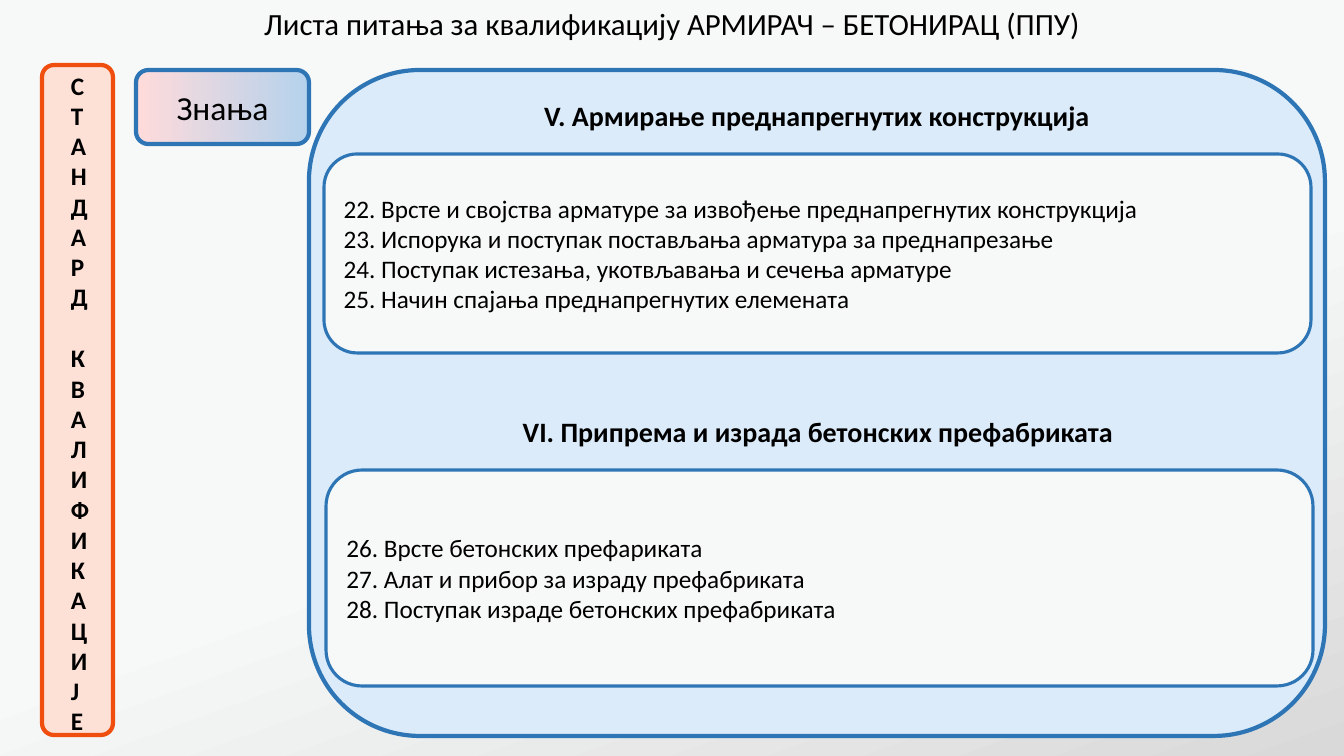
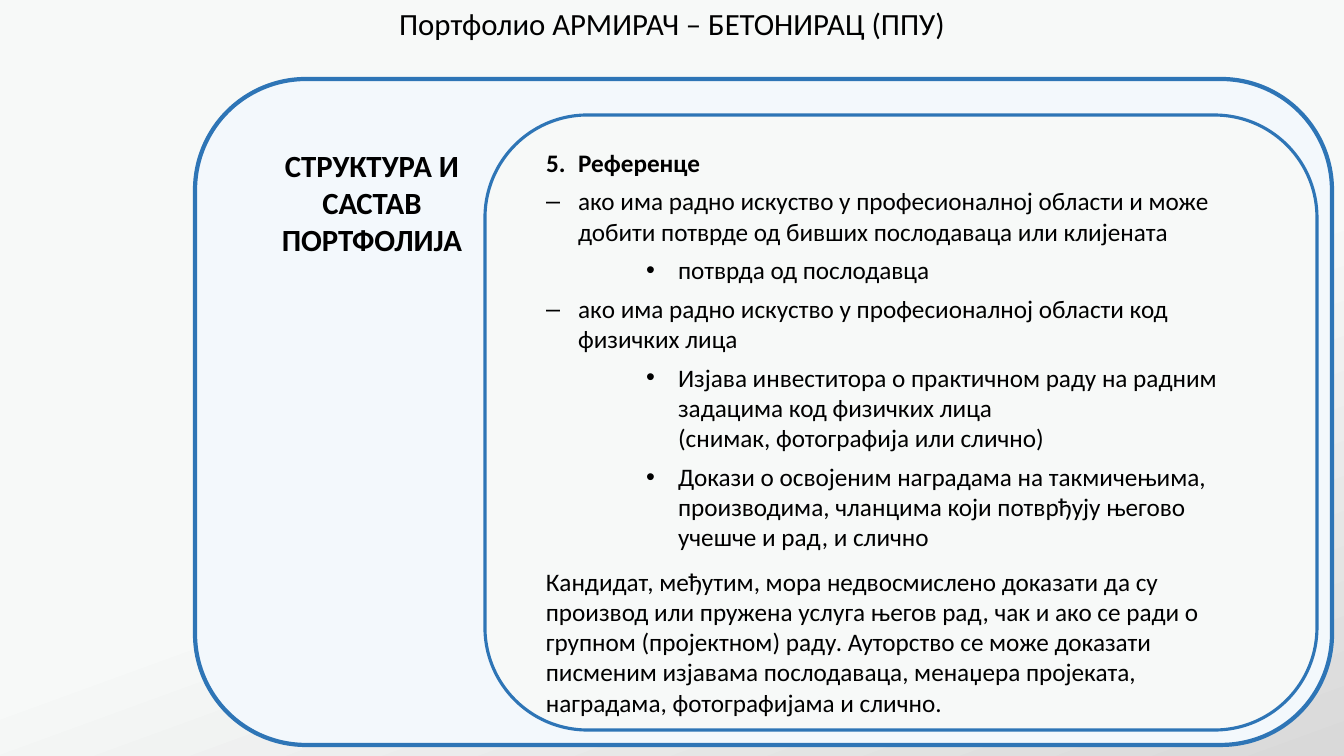
"""Build two slides on the rebar and concrete worker qualification."""
from lxml import etree
from pptx import Presentation
from pptx.dml.color import RGBColor
from pptx.enum.shapes import MSO_SHAPE
from pptx.enum.text import MSO_ANCHOR as ANCHOR, MSO_AUTO_SIZE as AUTO, PP_ALIGN as ALIGN
from pptx.oxml.ns import qn
from pptx.util import Emu, Pt

COLORS = {
    "text": "000000",
    "page": "F7F9F8",
    "page_edge": "D9D9D9",
    "blue": "2E75B6",
    "pale_blue": "DBEBFA",
    "faint_blue": "F3F8FC",
    "orange": "EF4E0F",
    "peach": "FDE1D7",
    "tag_left": "FFDBDB",
    "tag_right": "B5D2EC",
}
FONT = "Calibri"
PX = 12192000 / 1344
WIDTH, HEIGHT = 1344, 756

QUESTIONS_TITLE = "Листа питања за квалификацију АРМИРАЧ – БЕТОНИРАЦ (ППУ)"
STANDARD = ["СТАНДАРД", "КВАЛИФИКАЦИЈЕ"]
TAG = "Знања"
SECTIONS = [
    {
        "heading": "V. Армирање преднапрегнутих конструкција",
        "heading_box": (309, 94, 1016, 44),
        "list_box": (324, 154, 987, 199),
        "questions": [
            "22. Врсте и својства арматуре за извођење преднапрегнутих конструкција",
            "23. Испорука и поступак постављања арматура за преднапрезање",
            "24. Поступак истезања, укотвљавања и сечења арматуре",
            "25. Начин спајања преднапрегнутих елемената",
        ],
    },
    {
        "heading": "VI. Припрема и израда бетонских префабриката",
        "heading_box": (310, 410, 1016, 44),
        "list_box": (326, 470, 987, 216),
        "questions": [
            "26. Врсте бетонских префариката",
            "27. Алат и прибор за израду префабриката",
            "28. Поступак израде бетонских префабриката",
        ],
    },
]

PORTFOLIO_TITLE = "Портфолио АРМИРАЧ – БЕТОНИРАЦ (ППУ)"
CAPTION = "СТРУКТУРА И САСТАВ ПОРТФОЛИЈА"
REFERENCES = [
    ("head", "5.\tРеференце"),
    ("dash", "ако има радно искуство у професионалној области и може добити "
             "потврде од бивших послодаваца или клијената"),
    ("dot", "потврдa од послодавца"),
    ("dash", "aкo има радно искуство у професионалној области код физичких лица"),
    ("dot", "Изјава инвеститора о практичном раду на радним задацима код "
            "физичких лица\v(снимак, фотографија или слично)"),
    ("dot", "Докази о освојеним наградама на такмичењима, производима, чланцима "
            "који потврђују његово учешче и рад, и слично"),
]
MARKS = {
    "head": {"level": 0, "left": 32, "char": None},
    "dash": {"level": 0, "left": 32, "char": "–"},
    "dot": {"level": 2, "left": 132, "char": "•"},
}
HANG = 32
CLOSING = ("Кандидат, међутим, мора недвосмислено доказати да су производ или пружена "
           "услуга његов рад, чак и ако се ради о групном (пројектном) раду. Ауторство "
           "се може доказати писменим изјавама послодаваца, менаџера пројеката, "
           "наградама, фотографијама и слично.")


def px(n):
    return Emu(round(n * PX))


def rgb(name):
    return RGBColor.from_string(COLORS[name])


def place(sp, box):
    sp.left, sp.top, sp.width, sp.height = map(px, box)


def write(sp, lines, size, bold=False, align=ALIGN.LEFT, anchor=ANCHOR.TOP):
    tf = sp.text_frame
    tf.text = "\n".join(lines)
    tf.word_wrap = True
    tf.auto_size = AUTO.NONE
    tf.vertical_anchor = anchor
    for p in tf.paragraphs:
        p.alignment = align
        for r in p.runs:
            r.font.name = FONT
            r.font.size = Pt(size)
            r.font.bold = bold
            r.font.color.rgb = rgb("text")
    return tf


def gradient(fill, stops, angle):
    fill.gradient()
    fill.gradient_angle = angle
    for stop, (position, color) in zip(fill.gradient_stops, stops):
        stop.position = position
        stop.color.rgb = rgb(color)


def panel(slide, box, fill, line="blue", weight=3):
    sp = slide.shapes.add_shape(MSO_SHAPE.ROUNDED_RECTANGLE, *map(px, box))
    sp.shadow.inherit = False
    sp.fill.solid()
    sp.fill.fore_color.rgb = rgb(fill)
    sp.line.color.rgb = rgb(line)
    sp.line.width = Pt(weight)
    return sp


def label(slide, box, lines, size, **style):
    return write(slide.shapes.add_textbox(*map(px, box)), lines, size, **style)


def mark(p, kind):
    rule = MARKS[kind]
    p.level = rule["level"]
    pPr = p._p.get_or_add_pPr()
    pPr.set("marL", str(px(rule["left"])))
    pPr.set("indent", str(-px(HANG)))
    if rule["char"]:
        etree.SubElement(pPr, qn("a:buChar")).set("char", rule["char"])
    else:
        etree.SubElement(pPr, qn("a:buNone"))


def new_slide(prs, layout, title):
    slide = prs.slides.add_slide(prs.slide_layouts.get_by_name(layout))
    place(slide.shapes.title, (0, 0, WIDTH, 47))
    write(slide.shapes.title, [title], 22, align=ALIGN.CENTER)
    return slide


def questions_slide(prs):
    slide = new_slide(prs, "Title Only", QUESTIONS_TITLE)
    panel(slide, (309, 70, 1016, 666), "pale_blue")
    for section in SECTIONS:
        label(slide, section["heading_box"], [section["heading"]], 20,
              bold=True, align=ALIGN.CENTER)
        sp = panel(slide, section["list_box"], "page", weight=2.25)
        write(sp, section["questions"], 18, anchor=ANCHOR.MIDDLE)
    panel(slide, (42, 65, 71, 670), "peach", line="orange")
    tf = label(slide, (61, 65, 32, 681), STANDARD, 18, bold=True)
    tf.paragraphs[1].space_before = Pt(22)
    tag = panel(slide, (136, 70, 173, 74), "tag_left")
    gradient(tag.fill, [(0, "tag_left"), (1, "tag_right")], 0)
    write(tag, [TAG], 24, align=ALIGN.CENTER, anchor=ANCHOR.MIDDLE)


def portfolio_slide(prs):
    slide = new_slide(prs, "Title and Content", PORTFOLIO_TITLE)
    panel(slide, (195, 79, 1137, 666), "faint_blue")
    inner = panel(slide, (485, 115, 832, 615), "page", weight=2.25)
    body = slide.placeholders[1]
    inner.element.addnext(body.element)
    place(body, (536, 142, 729, 419))
    tf = write(body, [text for _, text in REFERENCES], 18)
    for i, (p, (kind, _)) in enumerate(zip(tf.paragraphs, REFERENCES)):
        p.space_before = Pt(6 if i else 0)
        mark(p, kind)
    tf.paragraphs[0].runs[0].font.bold = True
    label(slide, (259, 142, 226, 122), [CAPTION], 22, bold=True, align=ALIGN.CENTER)
    label(slide, (536, 561, 729, 162), [CLOSING], 18)


def main():
    prs = Presentation()
    prs.slide_width, prs.slide_height = px(WIDTH), px(HEIGHT)
    gradient(prs.slide_master.background.fill, [(0, "page_edge"), (0.45, "page")], 110)
    questions_slide(prs)
    portfolio_slide(prs)
    prs.save("out.pptx")


if __name__ == "__main__":
    main()
